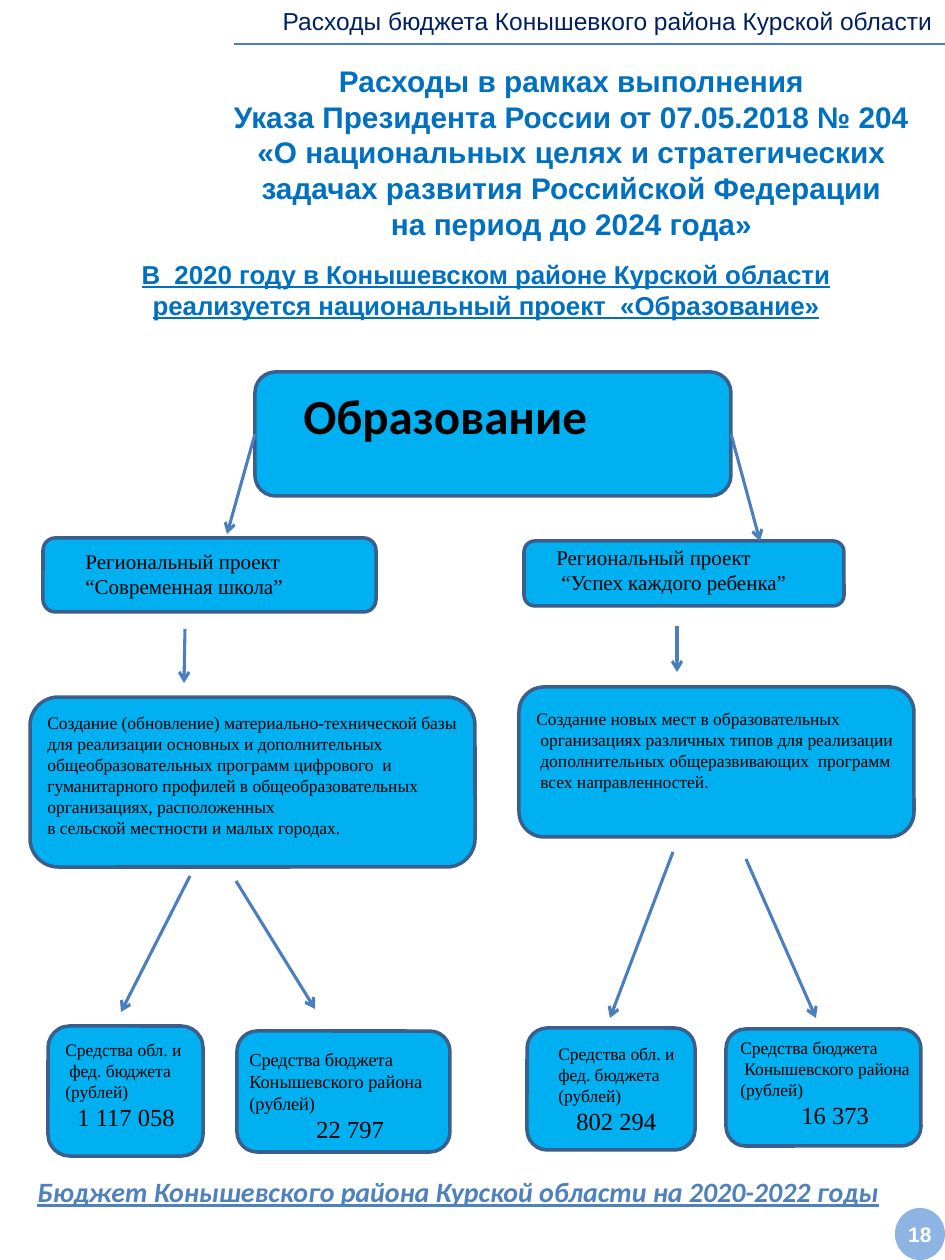
import dataclasses

import pptx
import pptx.dml.color
import pptx.enum.shapes
import pptx.enum.text
import pptx.oxml.ns
import pptx.util
from lxml import etree

EMU_PER_PX = 914400 / 126
SHAPE = pptx.enum.shapes.MSO_SHAPE
ALIGN = pptx.enum.text.PP_ALIGN
ANCHOR = pptx.enum.text.MSO_ANCHOR
LEFT_SIDE, RIGHT_SIDE = 1, 3


@dataclasses.dataclass(frozen=True)
class Theme:
    box: str = "00B0F0"
    border: str = "3A5F8C"
    arrow: str = "4B7EBC"
    heading: str = "0070C0"
    header: str = "002060"
    footer: str = "4F81BD"
    badge: str = "8EB4E3"
    ink: str = "000000"
    white: str = "FFFFFF"
    sans: str = "Arial"
    display: str = "Calibri"
    serif: str = "Times New Roman"
    title_size: float = 17
    subtitle_size: float = 14.8
    header_size: float = 14
    footer_size: float = 16
    root_size: float = 28
    project_size: float = 12
    detail_size: float = 10
    district_size: float = 10.5
    amount_size: float = 14
    badge_size: float = 12


@dataclasses.dataclass(frozen=True)
class Line:
    text: str
    indent: int = 0
    size: float = 0


def px(n):
    return pptx.util.Emu(round(n * EMU_PER_PX))


def rgb(value):
    return pptx.dml.color.RGBColor.from_string(value)


class Builder:
    def __init__(self, slide, theme):
        self.slide = slide
        self.theme = theme

    def set_lines(self, tf, lines, size, color, font, align=ALIGN.LEFT,
                  bold=False, italic=False, underline=False):
        lines = [Line(item) if isinstance(item, str) else item for item in lines]
        tf.text = "\n".join(line.text for line in lines)
        for p, line in zip(tf.paragraphs, lines):
            p.alignment = align
            if line.indent:
                p._p.get_or_add_pPr().set("marL", str(px(line.indent)))
            for r in p.runs:
                r.font.name = font
                r.font.size = pptx.util.Pt(line.size or size)
                r.font.color.rgb = rgb(color)
                r.font.bold = bold
                r.font.italic = italic
                r.font.underline = underline

    def text(self, bounds, lines, size, color, font, wrap=False,
             anchor=ANCHOR.TOP, **style):
        tf = self.slide.shapes.add_textbox(*map(px, bounds)).text_frame
        tf.word_wrap = wrap
        tf.vertical_anchor = anchor
        self.set_lines(tf, lines, size, color, font, **style)

    def note(self, bounds, lines, size, **style):
        self.text(bounds, lines, size, self.theme.ink, self.theme.serif, **style)

    def shape(self, kind, bounds, fill):
        sp = self.slide.shapes.add_shape(kind, *map(px, bounds))
        sp.shadow.inherit = False
        sp.fill.solid()
        sp.fill.fore_color.rgb = rgb(fill)
        return sp

    def box(self, bounds):
        sp = self.shape(SHAPE.ROUNDED_RECTANGLE, bounds, self.theme.box)
        sp.line.color.rgb = rgb(self.theme.border)
        sp.line.width = pptx.util.Pt(2)
        return sp

    def badge(self, bounds, label):
        sp = self.shape(SHAPE.OVAL, bounds, self.theme.badge)
        sp.line.fill.background()
        tf = sp.text_frame
        tf.margin_left = tf.margin_right = px(5)
        tf.margin_top = tf.margin_bottom = px(6)
        tf.vertical_anchor = ANCHOR.MIDDLE
        self.set_lines(tf, [label], self.theme.badge_size, self.theme.white,
                       self.theme.sans, ALIGN.CENTER, bold=True)

    def line(self, points, width=1.75, arrow=True):
        cxn = self.slide.shapes.add_connector(
            pptx.enum.shapes.MSO_CONNECTOR.STRAIGHT, *map(px, points))
        cxn.line.color.rgb = rgb(self.theme.arrow)
        cxn.line.width = pptx.util.Pt(width)
        qn = pptx.oxml.ns.qn
        props = cxn._element.spPr
        if arrow:
            etree.SubElement(props.find(qn("a:ln")), qn("a:tailEnd"), type="arrow")
        etree.SubElement(props, qn("a:effectLst"))
        return cxn


def main():
    prs = pptx.Presentation()
    prs.slide_width, prs.slide_height = px(945), px(1260)
    t = Theme()
    b = Builder(prs.slides.add_slide(prs.slide_layouts[6]), t)

    # Boxes: national project, regional projects, purposes, funding
    root = b.box((255, 372, 476, 124))
    for bounds in [
        (43, 538, 333, 74), (524, 541, 320, 65),
        (30, 697, 445, 170), (519, 687, 395, 150),
        (48, 1026, 155, 130), (237, 1031, 213, 121),
        (527, 1028, 168, 122), (726, 1029, 195, 117),
    ]:
        b.box(bounds)

    # Headings
    b.text((198, 43, 747, 218), [
        "Расходы в рамках выполнения\v"
        "Указа Президента России от 07.05.2018 № 204\v"
        "«О национальных целях и стратегических задачах развития Российской Федерации\v"
        "на период до 2024 года»",
    ], t.title_size, t.heading, t.sans, wrap=True, anchor=ANCHOR.MIDDLE,
        align=ALIGN.CENTER, bold=True)
    b.text((50, 252, 872, 74), [
        "В  2020 году в Конышевском районе Курской области "
        "реализуется национальный проект  «Образование»",
    ], t.subtitle_size, t.heading, t.sans, wrap=True,
        align=ALIGN.CENTER, bold=True, underline=True)

    # Page header, footer and number
    b.text((265, 0, 680, 43), ["Расходы бюджета Конышевкого района Курской области"],
           t.header_size, t.header, t.sans, wrap=True, align=ALIGN.RIGHT)
    b.line((234, 44, 945, 44), width=0.75, arrow=False)
    b.text((25, 1168, 879, 81),
           ["Бюджет Конышевского района Курской области на 2020-2022 годы"],
           t.footer_size, t.footer, t.display, bold=True, italic=True, underline=True)
    b.badge((895, 1208, 50, 52), "18")

    # National and regional projects
    b.text((291, 379, 312, 72), ["Образование"], t.root_size, t.ink, t.display, bold=True)
    b.note((73, 542, 231, 63), ["Региональный проект", "“Современная школа”"],
           t.project_size)
    b.note((544, 538, 263, 89),
           ["Региональный проект", Line("“Успех каждого ребенка”", 5)], t.project_size)

    # Purposes
    b.note((35, 706, 440, 161), [
        "Создание (обновление) материально-технической базы",
        "для реализации основных и дополнительных",
        "общеобразовательных программ цифрового  и",
        "гуманитарного профилей в общеобразовательных",
        "организациях, расположенных",
        "в сельской местности и малых городах.",
    ], t.detail_size, align=ALIGN.JUSTIFY)
    b.note((524, 702, 391, 118), [
        "Создание новых мест в образовательных",
        Line("организациях различных типов для реализации", 4),
        Line("дополнительных общеразвивающих  программ", 4),
        Line("всех направленностей.", 4),
    ], t.detail_size)

    # Funding: source, its second line's indent, amount and its indent
    joint = ("Средства обл. и", "фед. бюджета")
    district = ("Средства бюджета", "Конышевского района")
    for bounds, source, size, indent, amount, amount_indent in [
        ((53, 1033, 145, 127), joint, t.detail_size, 4, "1 117 058", 12),
        ((237, 1042, 203, 154), district, t.district_size, 0, "22 797", 67),
        ((546, 1037, 149, 127), joint, t.detail_size, 0, "802 294", 18),
        ((728, 1031, 200, 127), district, t.detail_size, 4, "16 373", 61),
    ]:
        b.note(bounds, [source[0], Line(source[1], indent), "(рублей)",
                        Line(amount, amount_indent, t.amount_size)], size)

    # Arrows
    for points in [
        (185, 629, 184, 683), (677, 626, 677, 672),
        (190, 876, 121, 1012), (236, 881, 315, 1009),
        (673, 852, 610, 1018), (746, 859, 816, 1018),
    ]:
        b.line(points)
    b.line((255, 434, 227, 534)).begin_connect(root, LEFT_SIDE)
    b.line((731, 434, 760, 541)).begin_connect(root, RIGHT_SIDE)

    prs.save("out.pptx")


if __name__ == "__main__":
    main()
